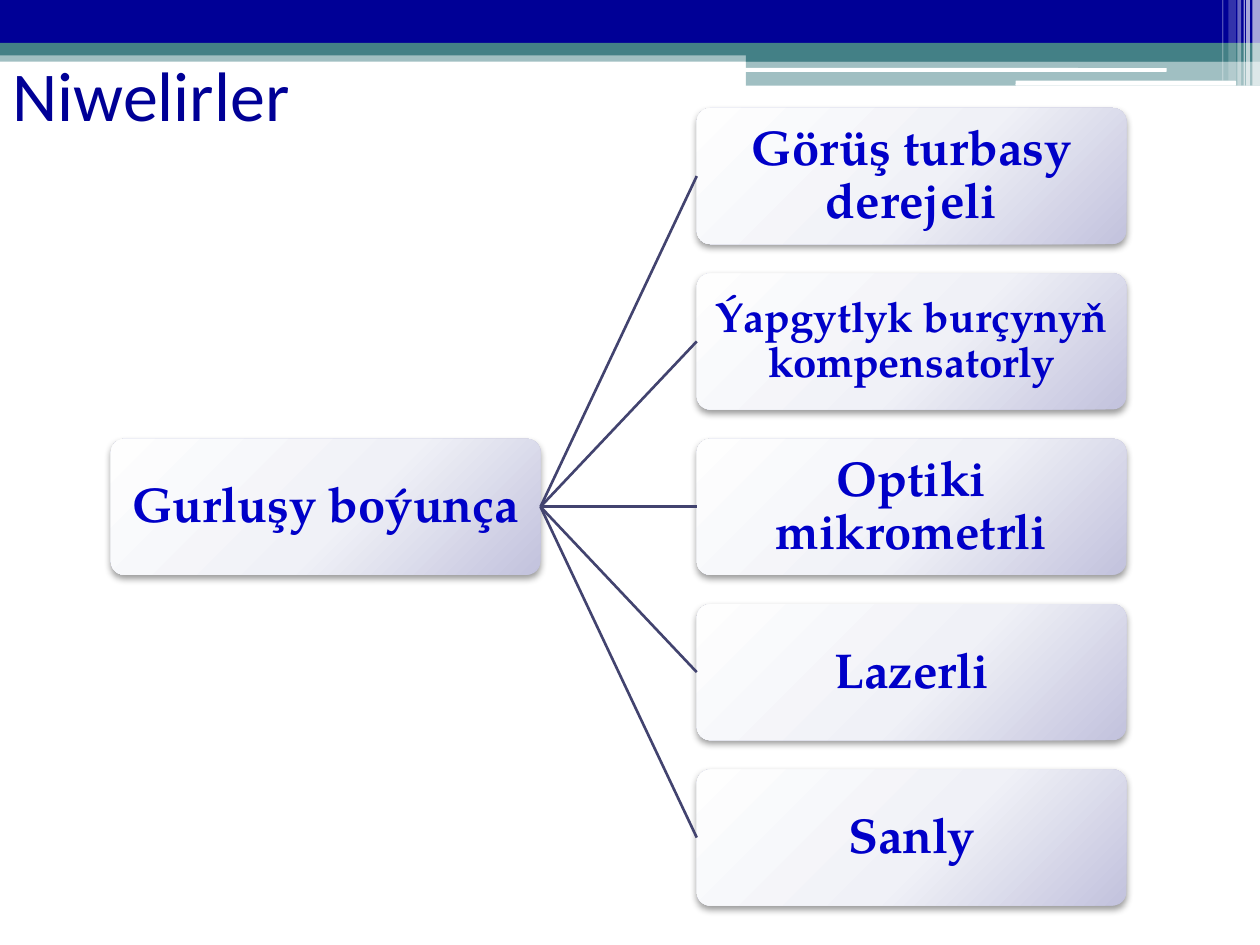
from typing import NamedTuple

from pptx import Presentation
from pptx.dml.color import RGBColor
from pptx.enum.shapes import MSO_CONNECTOR, MSO_SHAPE as Preset
from pptx.enum.text import MSO_ANCHOR as Anchor, MSO_AUTO_SIZE as AutoSize, PP_ALIGN as Align
from pptx.oxml import parse_xml
from pptx.oxml.ns import nsdecls, qn
from pptx.util import Inches, Pt

NAVY, TEAL, WHITE = "000096", "438086", "FFFFFF"
LABEL_BLUE, BRANCH_GREY = "0000C8", "42436F"
LABEL_FONT = "TeX Gyre Pagella"

# Tree grid, in percent of the slide's width or height
ROOT_COLUMN, LEAF_COLUMN = 8.8, 55.3
FIRST_ROW, ROW_PITCH = 11.43, 17.5
NODE_WIDTH, NODE_HEIGHT = 34.1, 14.4


class Band(NamedTuple):
    """Header strip; lengths in percent of the slide's size."""
    left: float
    top: float
    width: float
    height: float
    color: str
    opacity: int = 100
    rounded: bool = False


class Node(NamedTuple):
    label: str
    row: int
    size: int = 28


BANDS = [
    Band(0, 5.33, 100, 1.2, TEAL, 50),
    Band(0, 0, 100, 4.53, NAVY),
    Band(0, 4.53, 100, 1.33, TEAL),
    Band(59.2, 5.2, 40.8, 1.33, TEAL),
    Band(59.2, 6.4, 40.8, 2.67, TEAL, 50),
    Band(59.1, 7.2, 33.5, 0.4, WHITE, rounded=True),
    Band(80.6, 8.53, 17.5, 0.53, WHITE, rounded=True),
    Band(99.4, 0, 0.6, 9.07, WHITE, 65),
    Band(98.9, 0, 0.3, 9.07, WHITE, 65),
    Band(98.7, 0, 0.1, 9.07, WHITE, 60),
    Band(98.2, 0, 0.3, 9.07, WHITE, 40),
    Band(97.5, 0, 0.6, 8.53, WHITE, 20),
    Band(97, 0, 0.1, 8.53, WHITE, 30),
]

ROOT = Node("Gurluşy boýunça", 2)
LEAVES = [
    Node("Görüş turbasy derejeli", 0),
    Node("Ýapgytlyk burçynyň kompensatorly", 1, size=24),
    Node("Optiki mikrometrli", 2),
    Node("Lazerli", 3),
    Node("Sanly", 4),
]

NODE_GRADIENT = f"""<a:gradFill {nsdecls("a")} rotWithShape="1"><a:gsLst>
<a:gs pos="0"><a:srgbClr val="FEFEFE"/></a:gs>
<a:gs pos="55000"><a:srgbClr val="F0F1F7"/></a:gs>
<a:gs pos="100000"><a:srgbClr val="C2C2DD"/></a:gs></a:gsLst>
<a:path path="circle"><a:fillToRect l="-40000" t="-90000" r="140000" b="190000"/></a:path>
</a:gradFill>"""
NODE_SHADOW = f"""<a:outerShdw {nsdecls("a")} blurRad="{Pt(4.1)}" dist="{Pt(2)}" dir="5400000"
algn="t" rotWithShape="0"><a:srgbClr val="000000"><a:alpha val="40000"/></a:srgbClr></a:outerShdw>"""

deck = Presentation()
deck.slide_width, deck.slide_height = Inches(10), Inches(7.5)
slide = deck.slides.add_slide(deck.slide_layouts[5])


def rgb(color: str) -> RGBColor:
    return RGBColor.from_string(color)


def place(left: float, top: float, width: float, height: float) -> list[int]:
    """Turn percent of the slide's size into lengths."""
    spans = (deck.slide_width, deck.slide_height) * 2
    return [round(span * share / 100) for span, share in zip(spans, (left, top, width, height))]


def write(shape, text: str, *, font: str, size: int, color: str, bold: bool = False,
          align=Align.LEFT, spacing: float = 1.0, inset: float = 0.1) -> None:
    frame = shape.text_frame
    frame.word_wrap, frame.auto_size = True, AutoSize.NONE
    frame.vertical_anchor = Anchor.MIDDLE
    frame.margin_left = frame.margin_right = Inches(inset)
    frame.margin_top = frame.margin_bottom = Inches(min(inset, 0.05))
    paragraph = frame.paragraphs[0]
    paragraph.alignment, paragraph.line_spacing = align, spacing
    run = paragraph.add_run()
    run.text = text
    run.font.name, run.font.size, run.font.bold = font, Pt(size), bold
    run.font.color.rgb = rgb(color)


def draw_shape(preset, box: list[int]):
    shape = slide.shapes.add_shape(preset, *box)
    shape.shadow.inherit = False
    shape.line.fill.background()
    return shape


def draw_band(band: Band) -> None:
    preset = Preset.ROUNDED_RECTANGLE if band.rounded else Preset.RECTANGLE
    strip = draw_shape(preset, place(*band[:4]))
    strip.fill.solid()
    strip.fill.fore_color.rgb = rgb(band.color)
    if band.opacity < 100:
        tint = strip.element.spPr.find(f"{qn('a:solidFill')}/{qn('a:srgbClr')}")
        tint.append(parse_xml(f'<a:alpha {nsdecls("a")} val="{band.opacity * 1000}"/>'))


def draw_node(node: Node, column: float):
    top = FIRST_ROW + node.row * ROW_PITCH
    card = draw_shape(Preset.ROUNDED_RECTANGLE, place(column, top, NODE_WIDTH, NODE_HEIGHT))
    card.adjustments[0] = 0.1
    card.fill.background()
    properties = card.element.spPr
    properties.replace(properties.find(qn("a:noFill")), parse_xml(NODE_GRADIENT))
    properties.find(qn("a:effectLst")).append(parse_xml(NODE_SHADOW))
    write(card, node.label, font=LABEL_FONT, size=node.size, color=LABEL_BLUE, bold=True,
          align=Align.CENTER, spacing=0.9, inset=0.02)
    return card


def draw_branch(parent, child) -> None:
    branch = slide.shapes.add_connector(MSO_CONNECTOR.STRAIGHT, 0, 0, 0, 0)
    branch.begin_connect(parent, 3)
    branch.end_connect(child, 1)
    branch.line.color.rgb = rgb(BRANCH_GREY)
    branch.line.width = Pt(1.5)
    branch.element.spPr.append(parse_xml(f'<a:effectLst {nsdecls("a")}/>'))


# Header bands
for band in BANDS:
    draw_band(band)

# Title
title = slide.shapes.title
title.left, title.top, title.width, title.height = place(0, 2.13, 90, 15.6)
write(title, "Niwelirler", font="Calibri", size=40, color=NAVY)

# Tree: one root branching to the leaves
root_card = draw_node(ROOT, ROOT_COLUMN)
for leaf in LEAVES:
    draw_branch(root_card, draw_node(leaf, LEAF_COLUMN))

deck.save("out.pptx")
